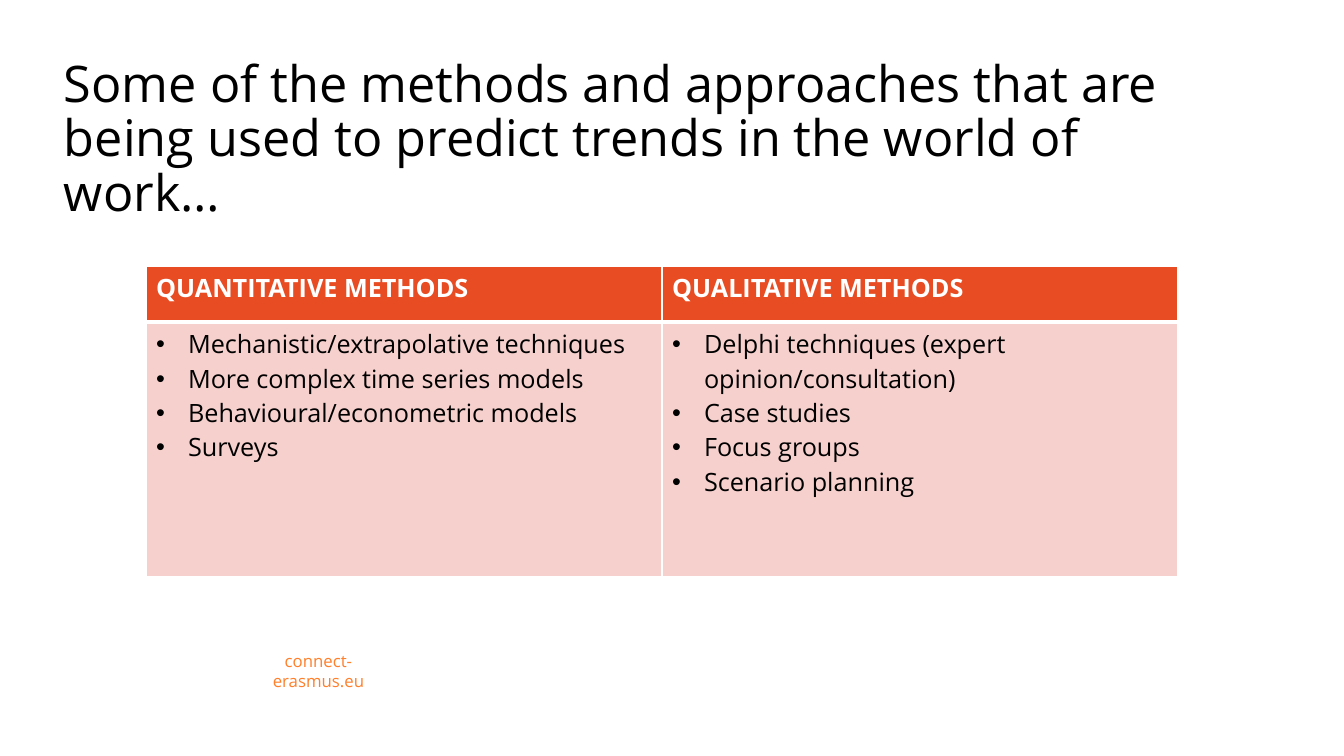
from lxml import etree
from pptx import Presentation
from pptx.dml.color import RGBColor
from pptx.enum.text import MSO_ANCHOR as Anchor, PP_ALIGN as Align
from pptx.oxml.ns import qn
from pptx.util import Emu, Pt

EMU_PER_PX = 914400 / 100.8
FONT = "Open Sans"
BLACK, WHITE, ORANGE = "000000", "FFFFFF", "FF7F2A"
HEADER_FILL, BODY_FILL = "E84C22", "F6D0CD"

TITLE = ("Some of the methods and approaches that are being used "
         "to predict trends in the world of work…")
METHODS = {
    "QUANTITATIVE METHODS": [
        "Mechanistic/extrapolative techniques",
        "More complex time series models",
        "Behavioural/econometric models",
        "Surveys",
    ],
    "QUALITATIVE METHODS": [
        "Delphi techniques (expert opinion/consultation)",
        "Case studies",
        "Focus groups",
        "Scenario planning",
    ],
}


def px(value):
    return Emu(round(value * EMU_PER_PX))


def color(hex_text):
    return RGBColor.from_string(hex_text)


def add_bullet(paragraph, indent=32):
    properties = paragraph._p.get_or_add_pPr()
    properties.set("marL", str(px(indent)))
    properties.set("indent", str(-px(indent)))
    etree.SubElement(properties, qn("a:buFont"), typeface="Arial")
    etree.SubElement(properties, qn("a:buChar"), char="•")


def write(frame, lines, size=18, fill=BLACK, bold=False, align=Align.LEFT,
          spacing=None, bullets=False):
    for index, line in enumerate(lines):
        paragraph = frame.add_paragraph() if index else frame.paragraphs[0]
        paragraph.alignment = align
        if spacing:
            paragraph.line_spacing = spacing
        if bullets:
            add_bullet(paragraph)
        run = paragraph.add_run()
        run.text = line
        run.font.name = FONT
        run.font.size = Pt(size)
        run.font.bold = bold
        run.font.color.rgb = color(fill)


def add_text(slide, text, left, top, width, height, anchor, **text_format):
    box = slide.shapes.add_textbox(px(left), px(top), px(width), px(height))
    frame = box.text_frame
    frame.word_wrap = True
    frame.vertical_anchor = anchor
    write(frame, [text], **text_format)


def style_cell(cell, fill, top=1, bottom=1):
    # Borders come before the fill in the cell properties
    properties = cell._tc.get_or_add_tcPr()
    widths = {"lnL": 1, "lnR": 1, "lnT": top, "lnB": bottom}
    for side, width in widths.items():
        line = etree.SubElement(properties, qn(f"a:{side}"), w=str(Pt(width)))
        solid = etree.SubElement(line, qn("a:solidFill"))
        etree.SubElement(solid, qn("a:srgbClr"), val=WHITE)
    cell.fill.solid()
    cell.fill.fore_color.rgb = color(fill)


def add_methods_table(slide, left, top, column_width, row_heights):
    table = slide.shapes.add_table(
        len(row_heights), len(METHODS), px(left), px(top),
        px(column_width * len(METHODS)), px(sum(row_heights))).table
    for row, height in zip(table.rows, row_heights):
        row.height = px(height)
    for index, (heading, methods) in enumerate(METHODS.items()):
        table.columns[index].width = px(column_width)
        header, body = table.cell(0, index), table.cell(1, index)
        style_cell(header, HEADER_FILL, bottom=3)
        write(header.text_frame, [heading], fill=WHITE, bold=True)
        style_cell(body, BODY_FILL, top=3)
        write(body.text_frame, methods, bullets=True)


def main():
    presentation = Presentation()
    presentation.slide_width, presentation.slide_height = px(1344), px(756)
    slide = presentation.slides.add_slide(presentation.slide_layouts[6])

    # Title
    add_text(slide, TITLE, 54, 141, 1159, 86, Anchor.BOTTOM, size=36, spacing=0.9)
    # Methods, one column per kind
    add_methods_table(slide, 146, 266, 516, [56, 255])
    # Footer
    add_text(slide, "connect-erasmus.eu", 230, 656, 177, 30, Anchor.MIDDLE,
             size=12, fill=ORANGE, align=Align.CENTER)

    presentation.save("out.pptx")


if __name__ == "__main__":
    main()
